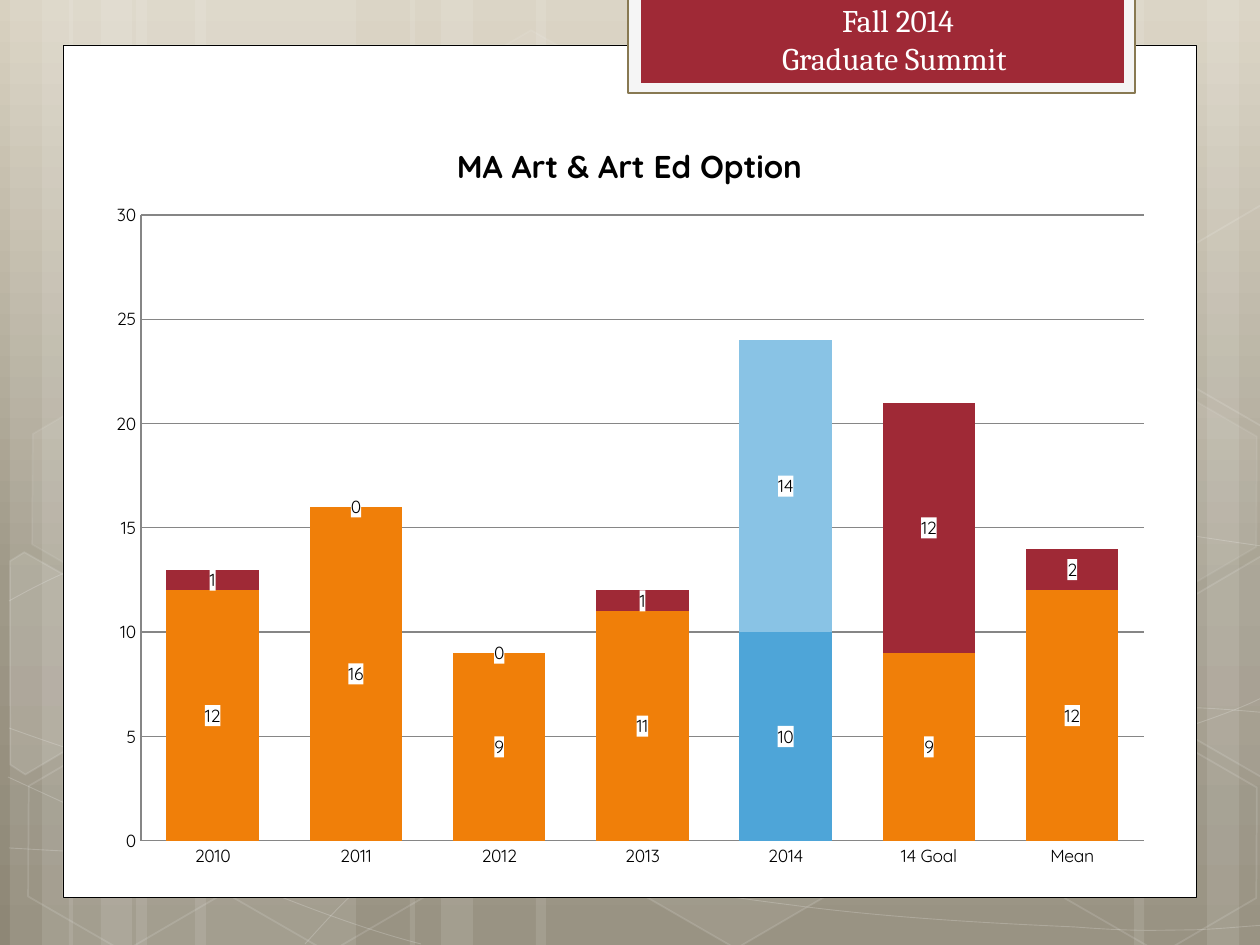
from copy import deepcopy
from dataclasses import dataclass
from math import cos, radians, sin
from typing import Any, Optional

from lxml.etree import SubElement
from pptx import Presentation
from pptx.chart.data import CategoryChartData
from pptx.dml.color import RGBColor
from pptx.enum.chart import XL_CHART_TYPE, XL_TICK_MARK
from pptx.enum.shapes import MSO_SHAPE
from pptx.enum.text import MSO_ANCHOR, MSO_AUTO_SIZE, PP_ALIGN
from pptx.oxml import parse_xml
from pptx.oxml.ns import nsdecls, qn
from pptx.util import Emu, Pt

SCALE = 914400 / 126
WHITE = "FFFFFF"
ORANGE, CRIMSON = "F07F09", "9F2936"
TILT = 30
Point = tuple[float, float]


@dataclass(frozen=True)
class Style:
    fill: Optional[str] = None
    fill_alpha: int = 100
    line: Optional[str] = None
    line_alpha: int = 100
    weight: float = 1


@dataclass(frozen=True)
class Box:
    left: int
    top: int
    width: int
    height: int
    style: Style
    preset: Any = MSO_SHAPE.RECTANGLE
    rotation: int = 0


@dataclass(frozen=True)
class Stack:
    name: str
    values: tuple[int, ...]
    color: str
    highlight: str


def px(length: float) -> Emu:
    return Emu(round(length * SCALE))


def color(value: str) -> RGBColor:
    return RGBColor.from_string(value)


def assign(target: Any, formats: dict[str, Any]) -> None:
    for name, value in formats.items():
        setattr(target, name, value)


def paint(fill: Any, value: str) -> None:
    fill.solid()
    fill.fore_color.rgb = color(value)


def fade(parent: Any, percent: int) -> None:
    if percent < 100:
        tone = parent.find(qn("a:solidFill")).find(qn("a:srgbClr"))
        SubElement(tone, qn("a:alpha")).set("val", str(percent * 1000))


def dress(shape: Any, style: Style) -> None:
    shape.shadow.inherit = False
    properties = shape._element.spPr
    if style.fill:
        paint(shape.fill, style.fill)
        fade(properties, style.fill_alpha)
    else:
        shape.fill.background()
    if style.line:
        paint(shape.line.fill, style.line)
        shape.line.width = Pt(style.weight)
        fade(properties.find(qn("a:ln")), style.line_alpha)
    else:
        shape.line.fill.background()


def draw_box(page: Any, box: Box) -> None:
    frame = map(px, (box.left, box.top, box.width, box.height))
    shape = page.shapes.add_shape(box.preset, *frame)
    shape.rotation = box.rotation
    if box.preset == MSO_SHAPE.HEXAGON:
        shape.adjustments[0] = 0.285
    dress(shape, box.style)


def draw_outline(page: Any, points: list[Point], style: Style, closed: bool) -> Any:
    start, *rest = points
    builder = page.shapes.build_freeform(*start, scale=SCALE)
    builder.add_line_segments(rest, close=closed)
    shape = builder.convert_to_shape()
    dress(shape, style)
    return shape


def draw_curve(page: Any, knots: list[Point], style: Style) -> None:
    shape = draw_outline(page, knots, style, False)
    lines = list(shape._element.iter(qn("a:lnTo")))
    for first in range(0, len(lines), 3):
        bend = lines[first]
        bend.tag = qn("a:cubicBezTo")
        for line in lines[first + 1:first + 3]:
            bend.append(line[0])
            line.getparent().remove(line)


def draw_cut_hexagon(page: Any, points: list[Point], center: Point, style: Style) -> None:
    cosine, sine = cos(radians(TILT)), sin(radians(TILT))
    middle_x, middle_y = center
    upright = [(middle_x + (x - middle_x) * cosine + (y - middle_y) * sine,
                middle_y - (x - middle_x) * sine + (y - middle_y) * cosine)
               for x, y in points]
    draw_outline(page, upright, style, True).rotation = TILT


def draw_background(page: Any) -> None:
    fill = page.background.fill
    fill.gradient()
    fill.gradient_angle = 270
    first = fill.gradient_stops[0]._gs
    first.addnext(deepcopy(first))
    for stop, (position, value) in zip(
            fill.gradient_stops, ((0, "D8D1C0"), (0.62, "9F9988"), (1, "8E8776"))):
        stop.position = position
        stop.color.rgb = color(value)


def draw_decoration(page: Any) -> None:
    for left, width, rotation in (
        (136, 220, 0), (10, 63, 0), (42, 105, 0), (195, 220, 0), (69, 63, 0), (101, 105, 0),
        (924, 220, 180), (1207, 63, 180), (1134, 105, 180),
        (536, 388, 0), (410, 63, 0), (441, 105, 0),
    ):
        draw_box(page, Box(left, 0, width, 945, Style(WHITE, 10), rotation=rotation))

    wave = Style(line=WHITE, line_alpha=20, weight=0.5)
    for knots in (
        [(9, 848), (77, 852), (145, 856), (239, 854), (334, 853), (451, 850), (577, 838),
         (703, 825), (882, 801), (998, 777), (1113, 753), (1231, 716), (1269, 694)],
        [(9, 601), (45, 581), (82, 562), (152, 543), (224, 524), (326, 496), (437, 488),
         (549, 479), (685, 478), (824, 488), (963, 498), (1193, 537), (1269, 547)],
        [(8, 777), (160, 847), (311, 916), (421, 944)],
        [(9, 728), (48, 742), (88, 756), (161, 776), (234, 795), (344, 827), (450, 848),
         (554, 869), (687, 892), (791, 905), (896, 919), (1008, 924), (1075, 927),
         (1140, 932), (1158, 930), (1191, 930), (1223, 929), (1246, 926), (1269, 925)],
        [(305, 944), (328, 919), (350, 893), (381, 871), (411, 848), (454, 823), (489, 805),
         (524, 788), (546, 780), (592, 767), (638, 754), (722, 737), (766, 728),
         (811, 719), (818, 719), (857, 717), (896, 713), (958, 709), (1000, 708),
         (1045, 707), (1116, 708), (1116, 708), (1144, 708), (1172, 708), (1201, 708),
         (1223, 709), (1245, 711), (1268, 713)],
    ):
        draw_curve(page, knots, wave)

    hollow = Style(line=WHITE, line_alpha=12)
    misty = Style(WHITE, 10, WHITE, 12)
    faint = Style(WHITE, 7, WHITE, 8)
    left_cut = [(10, 561), (24, 552), (121, 607), (120, 718), (25, 774), (10, 765)]
    right_cut = [(1167, 611), (1261, 556), (1271, 562), (1271, 772), (1263, 777), (1167, 722)]
    upper_cut = [(x, y - 351) for x, y in right_cut]
    for left, top, style in (
        (421, 45, Style(WHITE, 4, WHITE, 8)), (626, 742, Style(WHITE, 6, WHITE, 12)),
        (14, 745, hollow), (18, 393, faint), (219, 746, hollow),
        (949, 571, misty), (1051, 747, hollow), (1051, 396, faint),
    ):
        draw_box(page, Box(left, top, 220, 192, style, MSO_SHAPE.HEXAGON, TILT))
    for points, center, style in (
        (left_cut, (45, 674), misty),
        (right_cut, (1241, 655), Style(WHITE, 4, WHITE, 12)),
        (upper_cut, (1241, 304), hollow),
    ):
        draw_cut_hexagon(page, points, center, style)


def draw_title(page: Any) -> None:
    title = page.shapes.title
    assign(title, {"left": px(662), "top": px(-5), "width": px(472), "height": px(89)})
    title.text_frame.text = "Fall 2014\nGraduate Summit "
    assign(title.text_frame, {"word_wrap": True, "vertical_anchor": MSO_ANCHOR.TOP,
                              "auto_size": MSO_AUTO_SIZE.SHAPE_TO_FIT_TEXT})
    for para in title.text_frame.paragraphs:
        para.alignment = PP_ALIGN.CENTER
        for span in para.runs:
            assign(span.font, {"name": "Cambria", "size": Pt(18)})
            span.font.color.rgb = color(WHITE)
    page.shapes._spTree.append(title._element)


def draw_chart(page: Any, stacks: list[Stack]) -> None:
    data = CategoryChartData()
    data.categories = ["2010", "2011", "2012", "2013", "2014", "14 Goal", "Mean"]
    for stack in stacks:
        data.add_series(stack.name, stack.values)
    width, height = 1071, 766
    chart = page.shapes.add_chart(XL_CHART_TYPE.COLUMN_STACKED, px(94), px(116),
                                  px(width), px(height), data).chart
    assign(chart, {"has_legend": False, "has_title": True})
    chart.chart_title.text_frame.text = "MA Art & Art Ed Option"
    heading = chart.chart_title.text_frame.paragraphs[0].runs[0].font
    for font, size, bold in ((chart.font, 10, False), (heading, 18, True)):
        assign(font, {"name": "Quicksand", "size": Pt(size), "bold": bold})
        font.color.rgb = color("000000")

    ticks = {"major_tick_mark": XL_TICK_MARK.NONE, "minor_tick_mark": XL_TICK_MARK.NONE}
    assign(chart.category_axis, ticks)
    assign(chart.value_axis, ticks | {"minimum_scale": 0, "maximum_scale": 30,
                                      "major_unit": 5, "has_major_gridlines": True})
    for ruled in (chart.category_axis, chart.value_axis, chart.value_axis.major_gridlines):
        paint(ruled.format.line.fill, "868686")
        ruled.format.line.width = Pt(0.75)

    plot = chart.plots[0]
    assign(plot, {"gap_width": 55, "overlap": 100, "vary_by_categories": False})
    for series, stack in zip(plot.series, stacks):
        series.invert_if_negative = False
        paint(series.format.fill, stack.color)
        paint(series.points[4].format.fill, stack.highlight)
        labels = series.data_labels
        labels.show_value = True
        assign(labels.font, {"name": "Quicksand", "size": Pt(10)})
        labels._element.find(qn("c:txPr")).addprevious(parse_xml(
            f'<c:spPr {nsdecls("c", "a")}><a:solidFill><a:srgbClr val="{WHITE}"/>'
            '</a:solidFill></c:spPr>'))

    area = chart._chartSpace.chart.plotArea
    for old in area.findall(qn("c:layout")):
        area.remove(old)
    area.insert(0, parse_xml(
        f'<c:layout {nsdecls("c")}><c:manualLayout><c:layoutTarget val="inner"/>'
        f'<c:xMode val="edge"/><c:yMode val="edge"/><c:x val="{47 / width}"/>'
        f'<c:y val="{99 / height}"/><c:w val="{1003 / width}"/>'
        f'<c:h val="{626 / height}"/></c:manualLayout></c:layout>'))


def main() -> None:
    deck = Presentation()
    assign(deck, {"slide_width": px(1260), "slide_height": px(945)})
    page = deck.slides.add_slide(deck.slide_layouts[5])
    draw_background(page)
    draw_decoration(page)
    for box in (Box(63, 45, 1134, 853, Style(WHITE, line="000000", weight=0.5)),
                Box(628, -3, 507, 96, Style("F5F5F5", line="887952", weight=1.25)),
                Box(641, -3, 483, 86, Style(CRIMSON))):
        draw_box(page, box)
    draw_title(page)
    draw_chart(page, [Stack("Series 1", (12, 16, 9, 11, 10, 9, 12), ORANGE, "4EA5D8"),
                      Stack("Series 2", (1, 0, 0, 1, 14, 12, 2), CRIMSON, "89C3E5")])
    deck.save("out.pptx")


if __name__ == "__main__":
    main()
